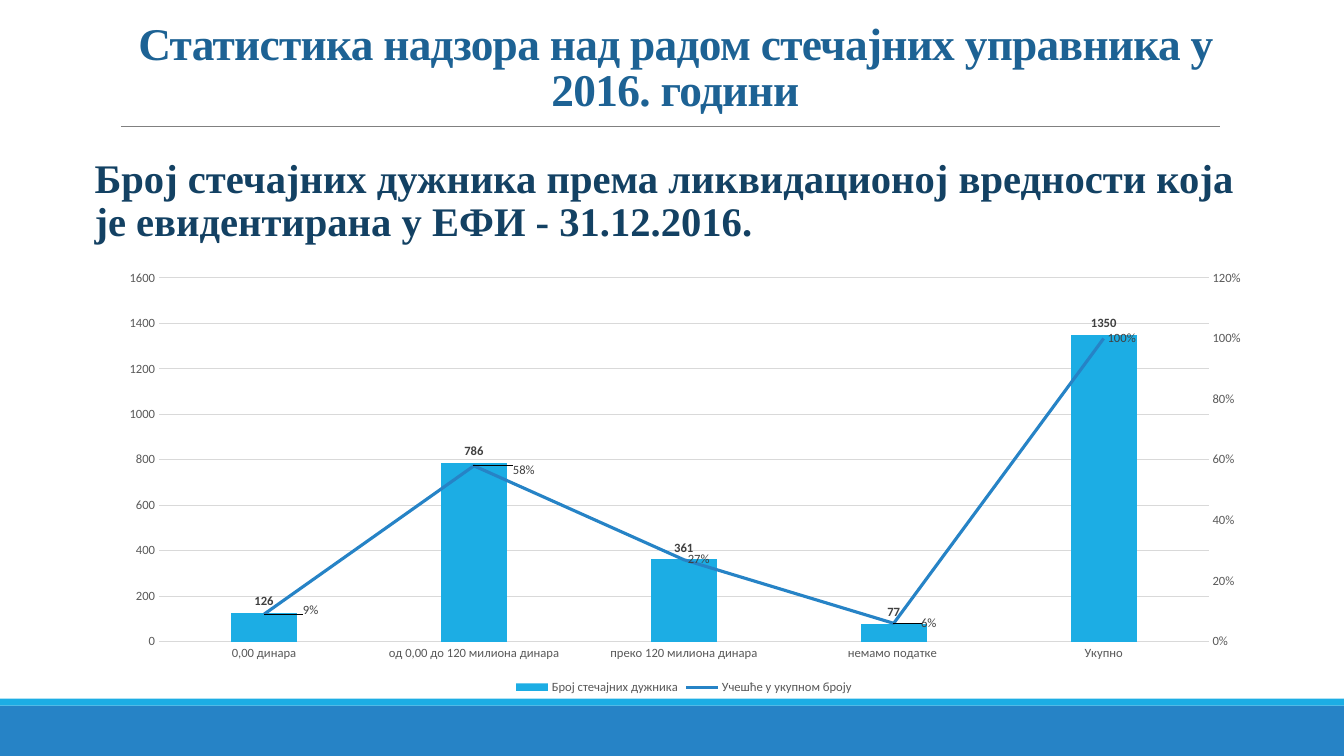
from copy import deepcopy
from pptx import Presentation
from pptx.chart.axis import ValueAxis
from pptx.chart.data import CategoryChartData as Data
from pptx.dml.color import RGBColor
from pptx.enum.chart import (XL_CHART_TYPE as Kind, XL_LABEL_POSITION as Spot,
                             XL_LEGEND_POSITION as Side, XL_MARKER_STYLE as Mark,
                             XL_TICK_MARK as Tick)
from pptx.enum.shapes import MSO_CONNECTOR as Conn, MSO_SHAPE as Form
from pptx.enum.text import MSO_ANCHOR as Anchor, MSO_AUTO_SIZE as Fit, PP_ALIGN as Align
from pptx.oxml import parse_xml
from pptx.oxml.ns import nsdecls, qn
from pptx.util import Pt

TITLE = "Статистика надзора над радом стечајних управника у 2016. години"
LEAD = ("Број стечајних дужника према ликвидационој вредности која "
        "је евидентирана у ЕФИ - 31.12.2016.")
CATS = ["0,00 динара", "од 0,00 до 120 милиона динара",
        "преко 120 милиона динара", "немамо податке ", "Укупно"]
COUNT = ("Број стечајних дужника", [126, 786, 361, 77, 1350])
SHARE = ("Учешће у укупном броју", [0.09, 0.58, 0.27, 0.06, 1])
SHIFTS = {0: (0.03, -0.01), 1: (0.03, 0.01), 3: (0.02, 0)}
PLOT = {"x": 0.05, "y": 0.04, "w": 0.9, "h": 0.83}
SKY, BLUE, GREY, INK, RULE = "1CADE4", "2683C6", "595959", "404040", "D9D9D9"
WIDE, HIGH = 960, 540
SERIF, SANS = "Times New Roman", "Calibri"


def color(code):
    return RGBColor.from_string(code)


def style(font, name, size, code, bold=False):
    font.name, font.size, font.bold = name, Pt(size), bold
    font.color.rgb = color(code)


def place(shape, *box):
    shape.left, shape.top, shape.width, shape.height = map(Pt, box)


def write(shape, text, size, code, gap, align):
    frame = shape.text_frame
    frame.word_wrap, frame.auto_size = True, Fit.NONE
    para = frame.paragraphs[0]
    para.line_spacing, para.alignment = gap, align
    run = para.add_run()
    run.text = text
    style(run.font, SERIF, size, code, True)
    return frame, run


def band(slide, top, tall, code):
    bar = slide.shapes.add_shape(Form.RECTANGLE, 0, Pt(top), Pt(WIDE), Pt(tall))
    bar.shadow.inherit = False
    bar.fill.solid()
    bar.fill.fore_color.rgb = color(code)
    bar.line.fill.background()


def layout(sizes, inner=False):
    """Manual layout element for a plot area or a label."""
    head = ('<c:layoutTarget val="inner"/><c:xMode val="edge"/><c:yMode val="edge"/>'
            if inner else "")
    body = "".join(f'<c:{key} val="{val}"/>' for key, val in sizes.items())
    return parse_xml(f'<c:layout {nsdecls("c")}><c:manualLayout>{head}{body}'
                     '</c:manualLayout></c:layout>')


def scale(axis, top, step, form):
    axis.minimum_scale, axis.maximum_scale, axis.major_unit = 0, top, step
    axis.tick_labels.number_format = form
    axis.tick_labels.number_format_is_linked = False


def labels(series, spot, bold, form):
    tags = series.data_labels
    tags.show_value, tags.position = True, spot
    tags.number_format, tags.number_format_is_linked = form, False
    style(tags.font, SANS, 9, INK, bold)


def drop(parent, name):
    for child in parent.findall(qn(name)):
        parent.remove(child)


def split(chart):
    """Move the second series to a line plot with its own right axis."""
    area = chart._chartSpace.chart.plotArea
    bars = area.find(qn("c:barChart"))
    cat, val = area.find(qn("c:catAx")), area.find(qn("c:valAx"))
    line = parse_xml(f'<c:lineChart {nsdecls("c")}><c:grouping val="standard"/>'
                     '<c:varyColors val="0"/><c:marker val="1"/>'
                     '<c:axId val="501"/><c:axId val="502"/></c:lineChart>')
    ser = bars.findall(qn("c:ser"))[1]
    drop(ser, "c:invertIfNegative")
    line.insert(2, ser)
    bars.addnext(line)
    right, base = deepcopy(val), deepcopy(cat)
    val.addnext(right)
    right.addnext(base)
    for axis, own, other in ((right, "502", "501"), (base, "501", "502")):
        axis.find(qn("c:axId")).set("val", own)
        axis.find(qn("c:crossAx")).set("val", other)
    right.find(qn("c:axPos")).set("val", "r")
    right.find(qn("c:crosses")).set("val", "max")
    base.find(qn("c:delete")).set("val", "1")
    drop(area, "c:layout")
    area.insert(0, layout(PLOT, True))
    return ValueAxis(right)


def draw(slide):
    """Add the chart of counts and shares."""
    data = Data()
    data.categories = CATS
    data.add_series(*COUNT, number_format="General")
    data.add_series(*SHARE, number_format="0%")
    chart = slide.shapes.add_chart(Kind.COLUMN_CLUSTERED, Pt(72), Pt(186),
                                   Pt(833), Pt(313), data).chart
    style(chart.font, SANS, 10, "000000")
    chart.has_title = False
    chart.has_legend = True
    chart.legend.position, chart.legend.include_in_layout = Side.BOTTOM, False
    style(chart.legend.font, SANS, 9, GREY)
    cat, left = chart.category_axis, chart.value_axis
    for axis in (cat, left):
        axis.major_tick_mark = axis.minor_tick_mark = Tick.NONE
        style(axis.tick_labels.font, SANS, 9, GREY)
    left.format.line.fill.background()
    for line in (cat.format.line, left.major_gridlines.format.line):
        line.color.rgb, line.width = color(RULE), Pt(0.75)
    right = split(chart)
    right.has_major_gridlines = False
    scale(left, 1600, 200, "General")
    scale(right, 1.2, 0.2, "0%")

    bars, line = chart.plots
    bars.gap_width, bars.overlap, bars.vary_by_categories = 219, -27, False
    count, share = bars.series[0], line.series[0]
    count.format.fill.solid()
    count.format.fill.fore_color.rgb = color(SKY)
    labels(count, Spot.OUTSIDE_END, True, "General")
    share.smooth, share.marker.style = False, Mark.NONE
    share.format.line.color.rgb, share.format.line.width = color(BLUE), Pt(2.25)
    labels(share, Spot.RIGHT, False, "0%")
    for spot, (x, y) in SHIFTS.items():
        tag = share.points[spot].data_label
        tag.position = Spot.RIGHT
        style(tag.font, SANS, 9, INK)
        item = share.data_labels._element.findall(qn("c:dLbl"))[-1]
        item.insert(1, layout({"x": x, "y": y}))


def main():
    deck = Presentation()
    deck.slide_width, deck.slide_height = Pt(WIDE), Pt(HIGH)
    slide = deck.slides.add_slide(deck.slide_layouts[5])
    band(slide, 504, 36, BLUE)
    band(slide, 499, 5, SKY)
    rule = slide.shapes.add_connector(Conn.STRAIGHT, Pt(86.4), Pt(90), Pt(871.2), Pt(90))
    rule.line.color.rgb, rule.line.width = color("808080"), Pt(0.5)
    rule._element.spPr.append(parse_xml(f'<a:effectLst {nsdecls("a")}/>'))

    title = slide.shapes.title
    place(title, 86.4, 22.3, 792, 114.5)
    frame, run = write(title, TITLE, 32.4, "1D6294", 0.85, Align.CENTER)
    frame.vertical_anchor = Anchor.BOTTOM
    frame.margin_top, frame.margin_bottom = 0, Pt(54)
    run._r.get_or_add_rPr().set("spc", "-50")

    lead = slide.shapes.add_textbox(0, 0, 0, 0)
    place(lead, 60.5, 109.4, 831, 88)
    frame, run = write(lead, LEAD, 29, "134163", 0.9, Align.LEFT)
    frame.margin_left, frame.margin_right = Pt(7.2), 0
    draw(slide)
    deck.save("out.pptx")


if __name__ == "__main__":
    main()
